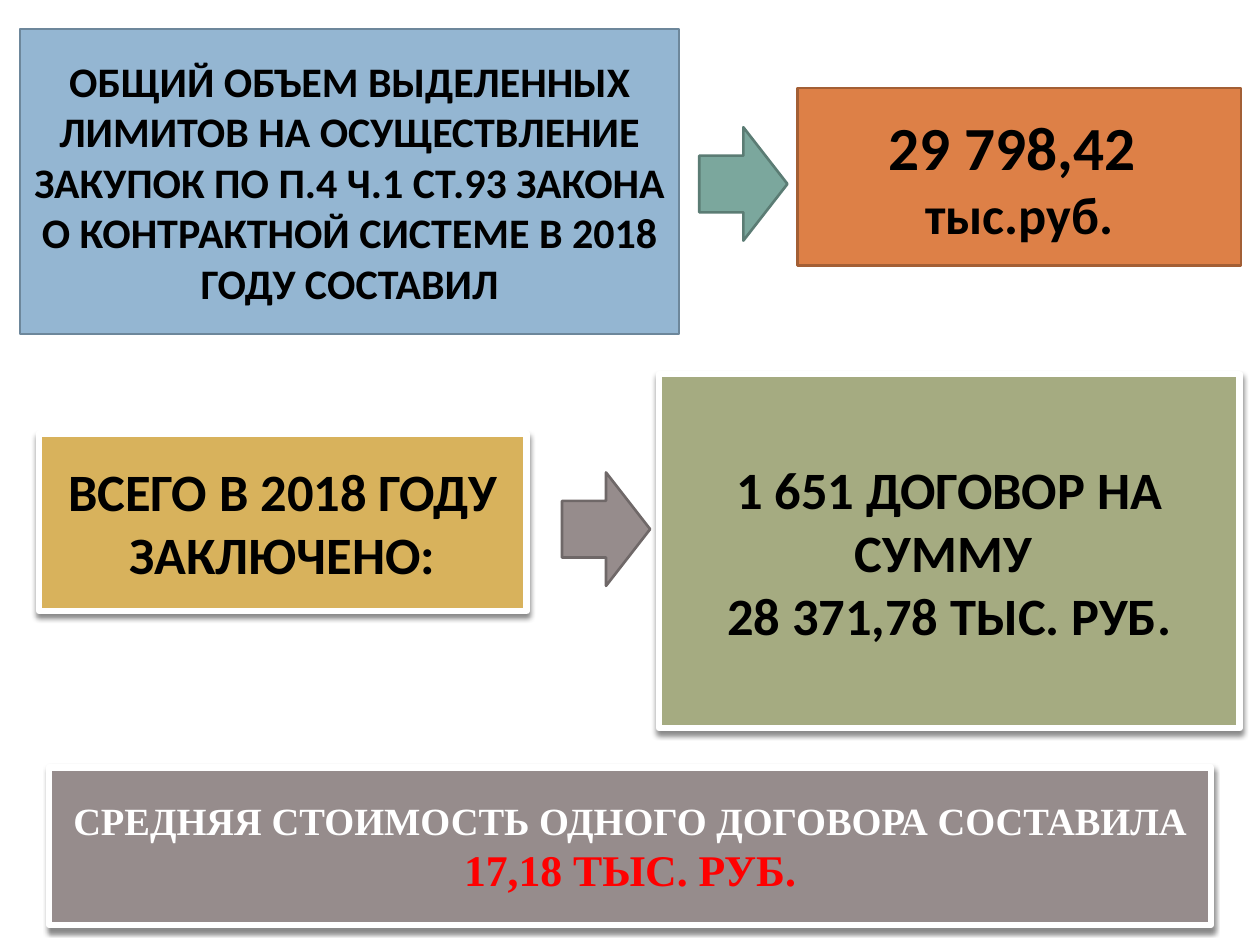
import lxml.etree
import pptx
import pptx.dml.color
import pptx.enum.shapes
import pptx.enum.text
import pptx.oxml
import pptx.oxml.ns
import pptx.util

SLIDE_WIDTH = pptx.util.Inches(10)
SLIDE_HEIGHT = pptx.util.Inches(7.5)

COLORS = {
    "blue": "94B6D2",
    "blue_edge": "6D879B",
    "orange": "DD8047",
    "orange_edge": "A35F35",
    "teal": "7BA79D",
    "teal_edge": "5B7C74",
    "green": "A5AB81",
    "gold": "D8B25C",
    "taupe": "968C8C",
    "taupe_edge": "6F6868",
    "white": "FFFFFF",
    "black": "000000",
    "red": "FF0000",
}


def rgb(color):
    return pptx.dml.color.RGBColor.from_string(COLORS[color])


def add_block(slide, preset, shares, fill, edge, edge_width=1.5):
    left, top, width, height = (share / 100 for share in shares)
    block = slide.shapes.add_shape(
        preset,
        round(left * SLIDE_WIDTH),
        round(top * SLIDE_HEIGHT),
        round(width * SLIDE_WIDTH),
        round(height * SLIDE_HEIGHT),
    )
    block.shadow.inherit = False
    block.fill.solid()
    block.fill.fore_color.rgb = rgb(fill)
    block.line.color.rgb = rgb(edge)
    block.line.width = pptx.util.Pt(edge_width)
    return block


def add_arrow(slide, left, top, fill, edge):
    preset = pptx.enum.shapes.MSO_SHAPE.DOWN_ARROW
    arrow = add_block(slide, preset, (left, top, 9, 9.33), fill, edge)
    arrow.rotation = 270


def cast_shadow(block):
    effects = block._element.spPr.find(pptx.oxml.ns.qn("a:effectLst"))
    effects.append(pptx.oxml.parse_xml(
        f'<a:outerShdw {pptx.oxml.ns.nsdecls("a")} blurRad="{pptx.util.Pt(3)}" '
        f'dist="{pptx.util.Pt(2.4)}" dir="5400000" rotWithShape="0">'
        f'<a:srgbClr val="{COLORS["black"]}"><a:alpha val="45000"/></a:srgbClr>'
        '</a:outerShdw>'
    ))


def set_font(font, size, color):
    font.size = pptx.util.Pt(size)
    font.color.rgb = rgb(color)


def add_line(block, index, family):
    frame = block.text_frame
    frame.word_wrap = True
    frame.vertical_anchor = pptx.enum.text.MSO_ANCHOR.MIDDLE
    line = frame.add_paragraph() if index else frame.paragraphs[0]
    line.alignment = pptx.enum.text.PP_ALIGN.CENTER
    line.font.name = family
    line.font.bold = True
    return line


def add_statement(slide, shares, fill, lines, edge=None):
    preset = pptx.enum.shapes.MSO_SHAPE.RECTANGLE
    if edge:
        statement = add_block(slide, preset, shares, fill, edge)
    else:
        statement = add_block(slide, preset, shares, fill, "white", 3.75)
        cast_shadow(statement)
    for index, (text, size) in enumerate(lines):
        line = add_line(statement, index, "Calibri")
        line.text = text
        set_font(line.font, size, "black")


def add_average(slide, shares, parts):
    preset = pptx.enum.shapes.MSO_SHAPE.RECTANGLE
    average = add_block(slide, preset, shares, "taupe", "white", 3.75)
    cast_shadow(average)
    line = add_line(average, 0, "Times New Roman")
    for text, size, color in parts:
        part = line.add_run()
        part.text = text
        set_font(part.font, size, color)


def main():
    deck = pptx.Presentation()
    deck.slide_width = SLIDE_WIDTH
    deck.slide_height = SLIDE_HEIGHT
    slide = deck.slides.add_slide(deck.slide_layouts[6])

    add_statement(slide, (1.6, 3.07, 52.3, 32.27), "blue", [
        ("ОБЩИЙ ОБЪЕМ ВЫДЕЛЕННЫХ ЛИМИТОВ НА ОСУЩЕСТВЛЕНИЕ ЗАКУПОК "
         "ПО П.4 Ч.1 СТ.93 ЗАКОНА О КОНТРАКТНОЙ СИСТЕМЕ В 2018 ГОДУ СОСТАВИЛ", 24),
    ], "blue_edge")
    add_statement(slide, (63.3, 9.33, 35.2, 18.8), "orange", [
        ("29 798,42 ", 35),
        ("тыс.руб.", 30),
    ], "orange_edge")
    add_arrow(slide, 54.5, 14.8, "teal", "teal_edge")

    add_statement(slide, (52.3, 39.6, 46.1, 37.47), "green", [
        ("1 651 ДОГОВОР НА СУММУ ", 30),
        ("28 371,78 ТЫС. РУБ.", 30),
    ])
    add_statement(slide, (3.1, 45.87, 38.7, 18.8), "gold", [
        ("ВСЕГО В 2018 ГОДУ ЗАКЛЮЧЕНО:", 30),
    ])
    add_arrow(slide, 43.6, 51.33, "taupe", "taupe_edge")

    add_average(slide, (3.9, 81.2, 92.2, 16.67), [
        ("СРЕДНЯЯ СТОИМОСТЬ ОДНОГО ДОГОВОРА СОСТАВИЛА ", 22, "white"),
        ("17,18 ТЫС. РУБ.", 25, "red"),
    ])
    deck.save("out.pptx")


if __name__ == "__main__":
    main()
